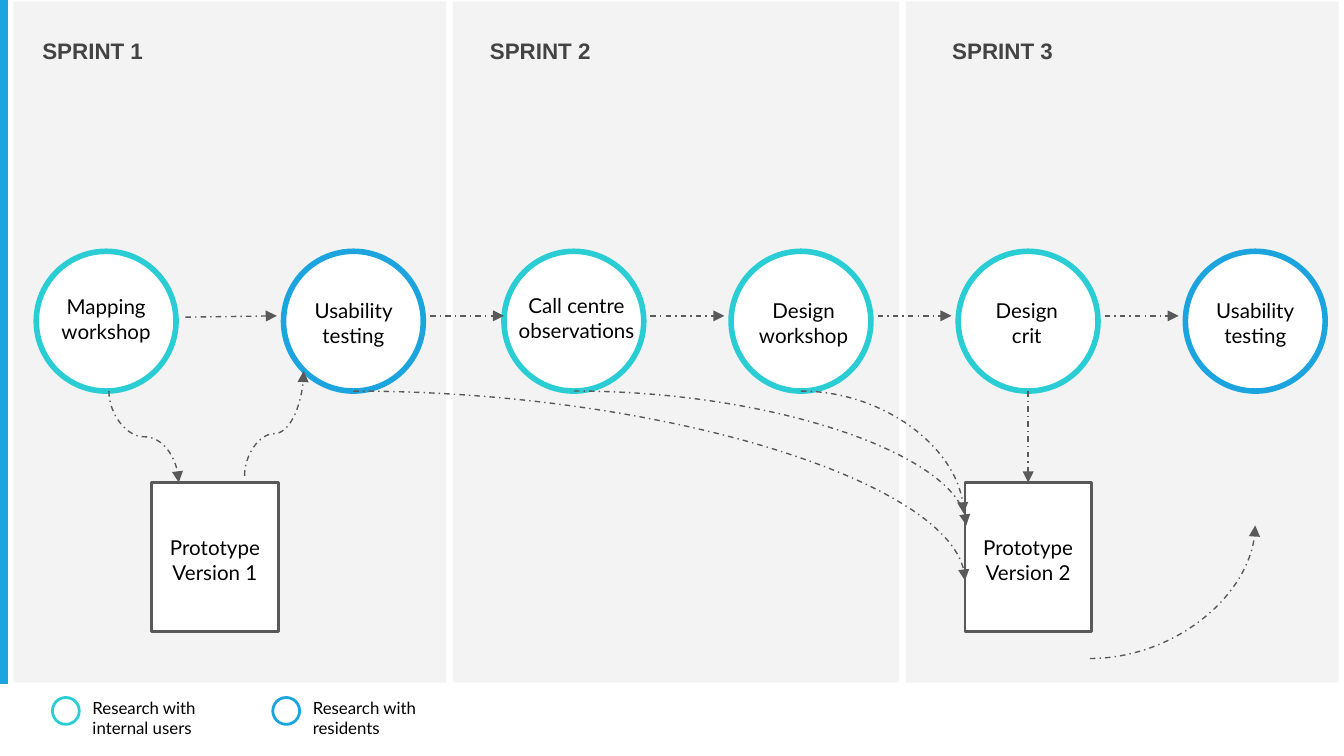
from lxml.etree import SubElement
from pptx import Presentation
from pptx.dml.color import RGBColor
from pptx.enum.dml import MSO_LINE
from pptx.enum.shapes import MSO_CONNECTOR, MSO_SHAPE
from pptx.enum.text import PP_ALIGN
from pptx.oxml.ns import qn
from pptx.util import Inches, Pt

COLORS = {
    "internal": "29CDD3", "residents": "1CA4DE", "panel": "F3F3F3",
    "heading": "434343", "stroke": "595959", "text": "000000", "white": "FFFFFF",
}

# The 16:9 slide is a grid of 100 columns by 56.25 rows
CELL = Inches(0.1)
COLUMNS, ROWS = 100, 56.25

CIRCLE_TOP, CIRCLE_SIZE = 18.7, 10.4
CIRCLE_BOTTOM = CIRCLE_TOP + CIRCLE_SIZE
CARD_TOP, CARD_WIDTH, CARD_HEIGHT = 35.9, 9.4, 11.1
LABEL_HEIGHT = 5.3
FLOW_ROW = 23.5

# Left column, width, heading column
PANELS = [(1, 32.2, 1.7), (33.7, 33.2, 35), (67.4, 32.2, 69.4)]

# Circle column, kind of research, label paragraphs, label column, row and width
ACTIVITIES = [
    (2.7, "internal", ["Mapping workshop"], 2.7, 20.9, 10.4),
    (21.1, "residents", ["Usability testing"], 20.1, 21.2, 12.4),
    (37.5, "internal", ["Call centre", "observations"], 36.7, 20.8, 12.4),
    (54.4, "internal", ["Design workshop"], 53.6, 21.2, 12.4),
    (71.3, "internal", ["Design", "crit"], 70.2, 21.2, 12.4),
    (88.2, "residents", ["Usability", "testing"], 87.2, 21.2, 12.4),
]
PROTOTYPES = [(11.3, "Version 1"), (71.8, "Version 2")]
FLOW_GAPS = [(32, 37.5), (48.4, 53.9), (65.3, 70.8), (82.2, 87.7)]
LEGEND = [(3.9, "internal", "Research with internal users"),
          (20.3, "residents", "Research with residents")]


def grid(*cells):
    return [round(cell * CELL) for cell in cells]


def color(name):
    return RGBColor.from_string(COLORS[name])


def add_figure(shapes, kind, left, top, width, height, fill=None, line=None, weight=1.5):
    figure = shapes.add_shape(kind, *grid(left, top, width, height))
    figure.shadow.inherit = False
    if fill:
        figure.fill.solid()
        figure.fill.fore_color.rgb = color(fill)
    else:
        figure.fill.background()
    if line:
        figure.line.color.rgb = color(line)
        figure.line.width = Pt(weight)
    else:
        figure.line.fill.background()


def add_label(shapes, lines, left, top, width, height, size=11, font="Lato",
              ink="text", bold=False, align=PP_ALIGN.CENTER):
    box = shapes.add_textbox(*grid(left, top, width, height))
    frame = box.text_frame
    frame.word_wrap = True
    frame.margin_left = frame.margin_right = CELL
    frame.margin_top = frame.margin_bottom = CELL
    for index, line in enumerate(lines):
        para = frame.add_paragraph() if index else frame.paragraphs[0]
        para.alignment = align
        span = para.add_run()
        span.text = line
        span.font.size = Pt(size)
        span.font.name = font
        span.font.bold = bold
        span.font.color.rgb = color(ink)


def add_arrow(page, start, end, kind=MSO_CONNECTOR.STRAIGHT):
    arrow = page.shapes.add_connector(kind, *grid(*start, *end))
    arrow.line.color.rgb = color("stroke")
    arrow.line.width = Pt(0.75)
    arrow.line.dash_style = MSO_LINE.DASH_DOT
    properties = arrow._element.spPr
    SubElement(properties.find(qn("a:ln")), qn("a:tailEnd"), type="triangle")
    SubElement(properties, qn("a:effectLst"))
    return arrow


def add_arc(page, start, end):
    """Curve that leaves sideways and arrives vertically."""
    arc = add_arrow(page, start, end, MSO_CONNECTOR.CURVE)
    arc._element.spPr.find(qn("a:prstGeom")).set("prst", "curvedConnector2")


def add_wave(page, start, end, bend=50000):
    """S-curve that leaves and arrives vertically: a sideways one turned by 270°."""
    (x1, y1), (x2, y2) = start, end
    middle_x, middle_y = (x1 + x2) / 2, (y1 + y2) / 2
    half_run, half_drift = (y2 - y1) / 2, (x2 - x1) / 2
    wave = add_arrow(page, (middle_x + half_run, middle_y - half_drift),
                     (middle_x - half_run, middle_y + half_drift), MSO_CONNECTOR.CURVE)
    properties = wave._element.spPr
    properties.find(qn("a:xfrm")).set("rot", str(270 * 60000))
    guides = properties.find(qn("a:prstGeom")).find(qn("a:avLst"))
    SubElement(guides, qn("a:gd"), name="adj1", fmla=f"val {bend}")


def add_panels(page):
    add_figure(page.shapes, MSO_SHAPE.RECTANGLE, -0.1, -0.1, 0.7, 51, "residents")
    for number, (left, width, heading) in enumerate(PANELS, start=1):
        add_figure(page.shapes, MSO_SHAPE.RECTANGLE, left, 0.1, width, 50.7, "panel")
        add_label(page.shapes, [f"SPRINT {number}"], heading, 1.8, 10.4, LABEL_HEIGHT,
                  size=12, font="Arial", ink="heading", bold=True)


def add_activities(page):
    for left, kind, lines, label_left, label_top, label_width in ACTIVITIES:
        add_figure(page.shapes, MSO_SHAPE.OVAL, left, CIRCLE_TOP, CIRCLE_SIZE,
                   CIRCLE_SIZE, "white", kind, 3)
        add_label(page.shapes, lines, label_left, label_top, label_width, LABEL_HEIGHT)


def add_prototypes(page):
    for left, version in PROTOTYPES:
        add_figure(page.shapes, MSO_SHAPE.RECTANGLE, left, CARD_TOP, CARD_WIDTH,
                   CARD_HEIGHT, "white", "stroke")
        add_label(page.shapes, ["Prototype", version], left - 0.5, 38.8,
                  CARD_WIDTH + 1, LABEL_HEIGHT)


def add_arrows(page):
    # Main flow between activities
    add_arrow(page, (13.8, 23.6), (20.6, FLOW_ROW))
    for start, end in FLOW_GAPS:
        add_arrow(page, (start, FLOW_ROW), (end, FLOW_ROW))
    # In and out of the first prototype
    add_wave(page, (8.1, CIRCLE_BOTTOM), (13.3, CARD_TOP))
    add_wave(page, (18.2, 35.4), (22.6, 27.6), bend=40200)
    # In and out of the second prototype
    add_arrow(page, (76.5, CIRCLE_BOTTOM), (76.5, CARD_TOP))
    for start, end in [(59.6, (71.7, 38.2)), (42.7, (71.9, 39.1)), (26.3, (71.8, 43.2))]:
        add_arc(page, (start, CIRCLE_BOTTOM), end)
    add_arc(page, (81.1, 49), (93.4, 39.1))


def add_legend(page):
    for left, kind, meaning in LEGEND:
        entry = page.shapes.add_group_shape().shapes
        add_figure(entry, MSO_SHAPE.OVAL, left, 51.9, 2, 2, line=kind)
        add_label(entry, [meaning], left + 2, 50.9, 12.7, 5.1, size=9,
                  align=PP_ALIGN.LEFT)


def main():
    deck = Presentation()
    deck.slide_width, deck.slide_height = grid(COLUMNS, ROWS)
    page = deck.slides.add_slide(deck.slide_layouts[6])
    add_panels(page)
    add_activities(page)
    add_prototypes(page)
    add_arrows(page)
    add_legend(page)
    deck.save("out.pptx")


if __name__ == "__main__":
    main()
